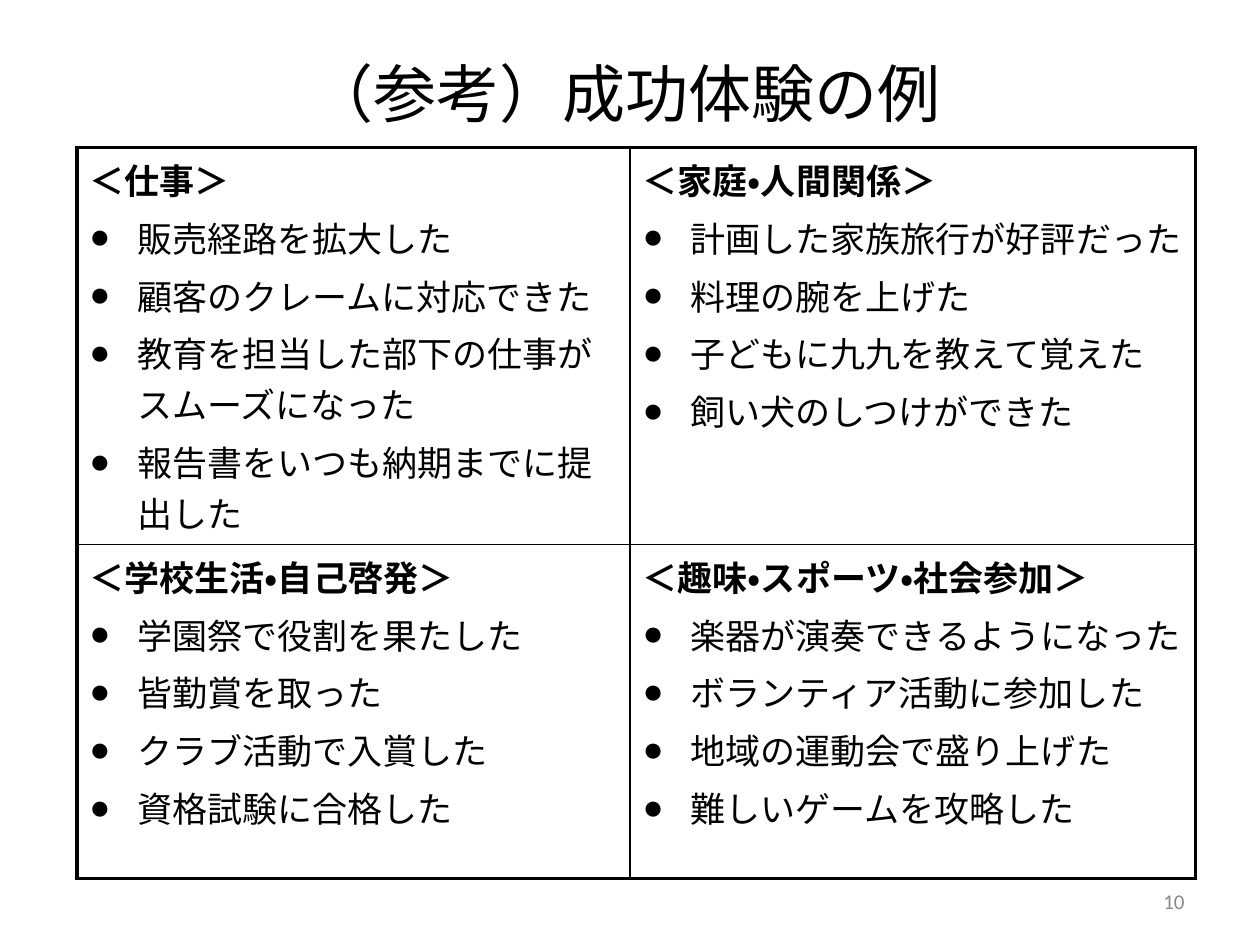
from lxml import etree
from pptx import Presentation
from pptx.dml.color import RGBColor
from pptx.enum.lang import MSO_LANGUAGE_ID
from pptx.enum.text import MSO_ANCHOR, PP_ALIGN
from pptx.oxml.ns import qn
from pptx.util import Inches, Pt

CENTER, RIGHT = PP_ALIGN.CENTER, PP_ALIGN.RIGHT
MIDDLE = MSO_ANCHOR.MIDDLE
JAPANESE = MSO_LANGUAGE_ID.JAPANESE

COLORS = {"ink": "000000", "number": "898989"}
OUTER, INNER = Pt(2.25), Pt(1)
HANGING = Inches(0.38)
COLUMNS, ROWS = (4.39, 4.49), (3.15, 2.65)

EXAMPLES = [
    [
        ("＜仕事＞", ["販売経路を拡大した", "顧客のクレームに対応できた",
                  "教育を担当した部下の仕事がスムーズになった",
                  "報告書をいつも納期までに提出した"]),
        ("＜家庭・人間関係＞", ["計画した家族旅行が好評だった", "料理の腕を上げた",
                        "子どもに九九を教えて覚えた", "飼い犬のしつけができた"]),
    ],
    [
        ("＜学校生活・自己啓発＞", ["学園祭で役割を果たした", "皆勤賞を取った",
                          "クラブ活動で入賞した", "資格試験に合格した"]),
        ("＜趣味・スポーツ・社会参加＞", ["楽器が演奏できるようになった", "ボランティア活動に参加した",
                             "地域の運動会で盛り上げた", "難しいゲームを攻略した"]),
    ],
]


def add_span(para, text, size, font, color, bold=False):
    span = para.add_run()
    span.text = text
    span.font.size = Pt(size)
    span.font.name = font
    span.font.bold = bold
    span.font.language_id = JAPANESE
    span.font.color.rgb = RGBColor.from_string(COLORS[color])


def add_label(page, box, text, size, color, align):
    """Place one line of text, vertically centred in its box."""
    label = page.shapes.add_textbox(*map(Inches, box))
    frame = label.text_frame
    frame.word_wrap = True
    frame.vertical_anchor = MIDDLE
    para = frame.paragraphs[0]
    para.alignment = align
    add_span(para, text, size, "Calibri", color)


def add_bullet(para):
    properties = para._p.get_or_add_pPr()
    properties.set("marL", str(HANGING))
    properties.set("indent", str(-HANGING))
    etree.SubElement(properties, qn("a:buFont"), typeface="Arial")
    etree.SubElement(properties, qn("a:buChar"), char="●")


def set_borders(cell, widths):
    """Draw the cell's sides; widths are keyed L, R, T, B in that order."""
    properties = cell._tc.get_or_add_tcPr()
    for side, width in widths.items():
        line = etree.SubElement(properties, qn(f"a:ln{side}"), w=str(width))
        fill = etree.SubElement(line, qn("a:solidFill"))
        etree.SubElement(fill, qn("a:srgbClr"), val=COLORS["ink"])


def fill_cell(cell, heading, items):
    frame = cell.text_frame
    for index, text in enumerate([heading] + items):
        para = frame.paragraphs[0] if index == 0 else frame.add_paragraph()
        para.space_before = Pt(4)
        if index > 0:
            add_bullet(para)
        add_span(para, text, 20, "Arial", "ink", bold=index == 0)


def add_examples(page, box):
    """Place the two-by-two table with a heavy frame and thin dividers."""
    table = page.shapes.add_table(len(ROWS), len(COLUMNS), *map(Inches, box)).table
    table.first_row = False
    table.horz_banding = False
    for column, width in zip(table.columns, COLUMNS):
        column.width = Inches(width)
    for row, height in zip(table.rows, ROWS):
        row.height = Inches(height)
    for r, row_examples in enumerate(EXAMPLES):
        for c, (heading, items) in enumerate(row_examples):
            cell = table.cell(r, c)
            fill_cell(cell, heading, items)
            set_borders(cell, {
                "L": OUTER if c == 0 else INNER,
                "R": OUTER if c == len(COLUMNS) - 1 else INNER,
                "T": OUTER if r == 0 else INNER,
                "B": OUTER if r == len(ROWS) - 1 else INNER,
            })
            cell.fill.background()


def main():
    deck = Presentation()
    deck.slide_width, deck.slide_height = Inches(10), Inches(7.5)
    page = deck.slides.add_slide(deck.slide_layouts[6])
    # Title
    add_label(page, (0.6, 0.49, 8.73, 0.49), "（参考）成功体験の例", 36, "ink", CENTER)
    # Examples by area of life
    add_examples(page, (0.61, 1.17, sum(COLUMNS), sum(ROWS)))
    # Page number
    add_label(page, (7.17, 6.95, 2.33, 0.4), "10", 12, "number", RIGHT)
    deck.save("out.pptx")


if __name__ == "__main__":
    main()
